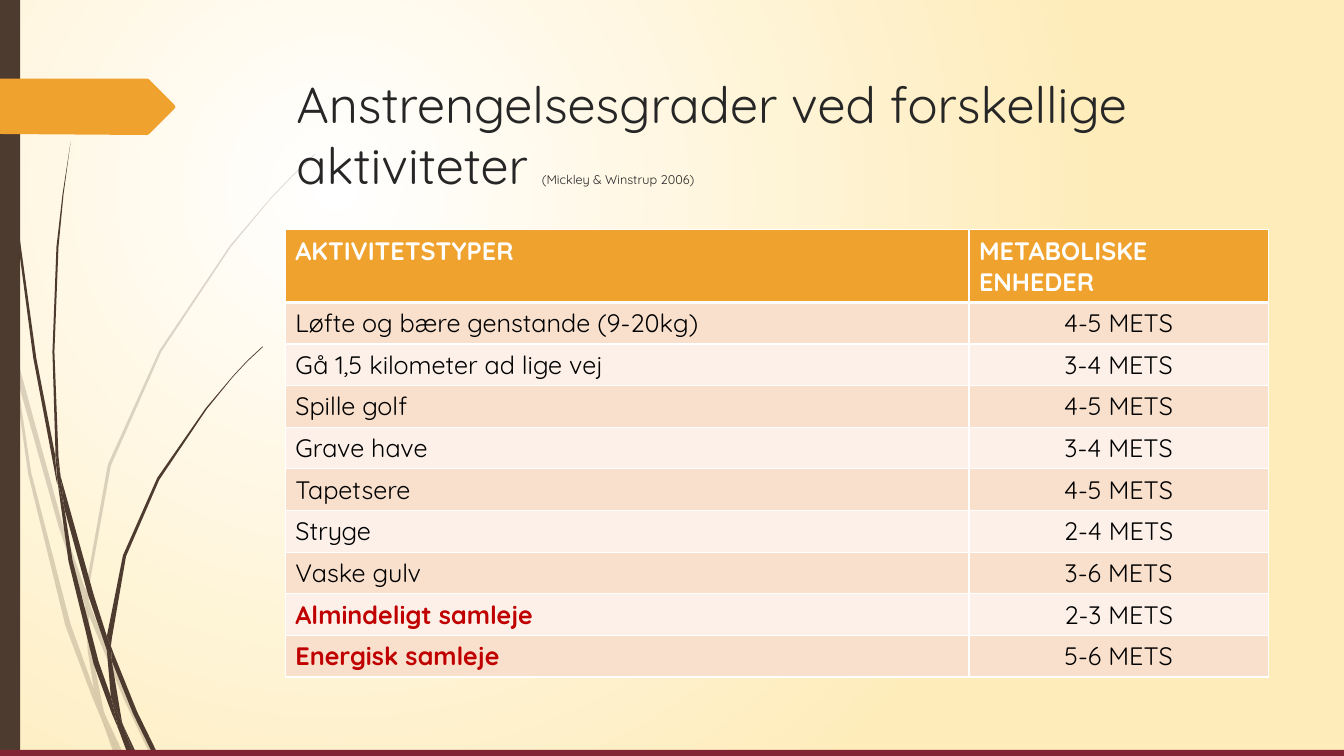
import pptx
import pptx.dml.color
import pptx.enum.shapes
import pptx.enum.text
import pptx.oxml
import pptx.oxml.ns
import pptx.util

Inches = pptx.util.Inches
RGBColor = pptx.dml.color.RGBColor
Align = pptx.enum.text.PP_ALIGN

TITLE = "Anstrengelsesgrader ved forskellige aktiviteter "
CITATION = "(Mickley & Winstrup 2006)"
HEADER = ("AKTIVITETSTYPER", "METABOLISKE ENHEDER")
ACTIVITIES = [
    ("Løfte og bære genstande (9-20kg)", "4-5 METS"),
    ("Gå 1,5 kilometer ad lige vej", "3-4 METS"),
    ("Spille golf", "4-5 METS"),
    ("Grave have", "3-4 METS"),
    ("Tapetsere", "4-5 METS"),
    ("Stryge", "2-4 METS"),
    ("Vaske gulv", "3-6 METS"),
    ("Almindeligt samleje", "2-3 METS"),
    ("Energisk samleje", "5-6 METS"),
]
HIGHLIGHTED = ("Almindeligt samleje", "Energisk samleje")
COLUMN_WIDTHS = (6.78, 2.97)
HEADER_HEIGHT = 0.72
BODY_HEIGHT = 3.72

FONT = "Quicksand"
WHITE = RGBColor(0xFF, 0xFF, 0xFF)
BLACK = RGBColor(0x00, 0x00, 0x00)
CREAM = RGBColor(0xFE, 0xEC, 0xBA)
BROWN = RGBColor(0x4E, 0x3B, 0x30)
WINE = RGBColor(0x82, 0x24, 0x33)
ORANGE = RGBColor(0xF0, 0xA2, 0x2E)
CHARCOAL = RGBColor(0x26, 0x26, 0x26)
RED = RGBColor(0xC0, 0x00, 0x00)
BANDS = (RGBColor(0xF9, 0xE0, 0xCD), RGBColor(0xFC, 0xF0, 0xE8))

FAINT_GRASS = [
    [(0.11, 3.5), (0.09, 3.22), (0, 2.82), (0, 2.99), (0.1, 3.44)],
    [(0.58, 5.22), (0.84, 5.99), (0.85, 5.86), (0.62, 5.2), (0.14, 3.45), (0.17, 3.76)],
    [(0.92, 6.07), (0.88, 5.96), (0.88, 6.1), (1.23, 6.94), (1.5, 7.51), (1.55, 7.51),
     (1.27, 6.92)],
    [(1.19, 7.51), (1.24, 7.51), (1.05, 7.11)],
    [(0.93, 6.83), (0.7, 6.19), (0.31, 4.69), (0.17, 3.76), (0.11, 3.5), (0.28, 4.7),
     (0.65, 6.21), (0.92, 6.93), (1.01, 7.14), (0.99, 7.07)],
    [(0.84, 5.99), (0.87, 6.46), (0.93, 6.83), (0.96, 6.92), (1.05, 7.11), (1.03, 7.06),
     (0.91, 6.46), (0.88, 6.1), (0.88, 6.08)],
    [(0.88, 5.84), (1.1, 4.62), (1.6, 3.49), (2.29, 2.45), (2.68, 1.98), (2.9, 1.75),
     (3.12, 1.54), (3.12, 1.53), (2.89, 1.75), (2.68, 1.97), (2.28, 2.44), (1.58, 3.48),
     (1.07, 4.61), (0.85, 5.84), (0.85, 5.86), (0.88, 5.96)],
    [(1.01, 7.14), (1.14, 7.51), (1.19, 7.51)],
    [(0.88, 6.08), (0.88, 6.1), (0.88, 5.96), (0.85, 5.86), (0.84, 5.99)],
    [(0.96, 6.92), (0.93, 6.83), (0.99, 7.07), (1.01, 7.14), (1.19, 7.51), (1.05, 7.11)],
]
DARK_GRASS = [
    [(0.07, 1.1), (0.17, 2.33), (0.33, 3.55), (0.56, 4.77), (0.57, 4.81), (0.55, 4.57),
     (0.55, 4.53), (0.36, 3.55), (0.19, 2.32), (0.08, 1.09), (0.05, 0.48), (0.04, 0),
     (0.03, 0), (0.04, 0.48)],
    [(0.88, 5.92), (1.06, 6.45), (1.06, 6.31), (0.93, 5.9), (0.6, 4.72), (0.64, 5.05)],
    [(1.13, 6.49), (1.1, 6.41), (1.11, 6.56), (1.32, 7.08), (1.52, 7.49), (1.57, 7.49),
     (1.36, 7.06)],
    [(1.1, 6.91), (0.98, 6.57), (0.72, 5.56), (0.64, 5.05), (0.57, 4.77), (0.68, 5.57),
     (0.93, 6.59), (1.11, 7.08), (1.17, 7.22), (1.16, 7.17)],
    [(0.6, 4.72), (0.58, 4.53), (0.54, 3.49), (0.58, 2.45), (0.63, 1.93), (0.7, 1.41),
     (0.62, 1.93), (0.56, 2.45), (0.52, 3.49), (0.55, 4.49)],
    [(1.33, 7.49), (1.36, 7.49), (1.22, 7.19)],
    [(0.57, 4.77), (0.64, 5.05), (0.6, 4.72), (0.55, 4.49), (0.55, 4.53)],
    [(1.11, 6.33), (1.25, 5.52), (1.58, 4.76), (2.05, 4.06), (2.31, 3.74), (2.45, 3.59),
     (2.61, 3.44), (2.6, 3.44), (2.45, 3.58), (2.31, 3.73), (2.04, 4.05), (1.56, 4.74),
     (1.22, 5.51), (1.06, 6.31), (1.1, 6.41)],
    [(1.17, 7.22), (1.27, 7.49), (1.31, 7.49)],
    [(1.06, 6.45), (1.1, 6.91), (1.16, 7.06), (1.22, 7.19), (1.21, 7.16), (1.11, 6.56),
     (1.09, 6.51)],
    [(1.06, 6.45), (1.09, 6.51), (1.11, 6.56), (1.1, 6.41), (1.06, 6.31)],
    [(1.16, 7.06), (1.1, 6.91), (1.16, 7.17), (1.17, 7.22), (1.3, 7.49), (1.33, 7.49),
     (1.22, 7.19)],
]
ARROW = [(0, 0.78), (1.46, 0.78), (1.48, 0.79), (1.73, 1.04), (1.74, 1.06), (1.73, 1.08),
         (1.48, 1.33), (1.46, 1.34), (0, 1.33)]


def paint(shape, color, alpha=None):
    shape.shadow.inherit = False
    shape.fill.solid()
    shape.fill.fore_color.rgb = color
    shape.line.fill.background()
    if alpha:
        tint = shape.element.find(".//" + pptx.oxml.ns.qn("a:srgbClr"))
        tint.append(pptx.oxml.parse_xml(
            f'<a:alpha {pptx.oxml.ns.nsdecls("a")} val="{alpha * 1000}"/>'))


def add_outline(page, points, color, alpha=None):
    start, *others = [(Inches(x), Inches(y)) for x, y in points]
    builder = page.shapes.build_freeform(*start, scale=1.0)
    builder.add_line_segments(others, close=True)
    paint(builder.convert_to_shape(), color, alpha)


def add_bar(page, left, top, width, height, color):
    bar = page.shapes.add_shape(pptx.enum.shapes.MSO_SHAPE.RECTANGLE, Inches(left),
                                Inches(top), Inches(width), Inches(height))
    paint(bar, color)


def write(para, text, size=18, color=BLACK, bold=False, align=Align.LEFT):
    para.alignment = align
    span = para.add_run()
    span.text = text
    span.font.name = FONT
    span.font.size = pptx.util.Pt(size)
    span.font.color.rgb = color
    span.font.bold = bold


def set_borders(cell, top, bottom):
    properties = cell._tc.get_or_add_tcPr()
    edges = (("lnL", 1), ("lnR", 1), ("lnT", top), ("lnB", bottom))
    for position, (edge, points) in enumerate(edges):
        properties.insert(position, pptx.oxml.parse_xml(
            f'<a:{edge} {pptx.oxml.ns.nsdecls("a")} w="{points * 12700}">'
            f'<a:solidFill><a:srgbClr val="{WHITE}"/></a:solidFill></a:{edge}>'))


def set_background(page):
    fill = page.background.fill
    fill.gradient()
    for stop, color in zip(fill.gradient_stops, (WHITE, CREAM)):
        stop.color.rgb = color
    linear = page.element.find(".//" + pptx.oxml.ns.qn("a:lin"))
    linear.getparent().replace(linear, pptx.oxml.parse_xml(
        f'<a:path {pptx.oxml.ns.nsdecls("a")} path="circle">'
        '<a:fillToRect l="50000" t="50000" r="100000" b="100000"/></a:path>'))


def add_title(page):
    box = page.shapes.add_textbox(Inches(2.84), Inches(0.68), Inches(9.75), Inches(1.4))
    box.text_frame.word_wrap = True
    para = box.text_frame.paragraphs[0]
    write(para, TITLE, size=36, color=CHARCOAL)
    write(para, CITATION, size=9, color=CHARCOAL)


def add_activity_table(page):
    rows = [HEADER, *ACTIVITIES]
    table = page.shapes.add_table(
        len(rows), len(HEADER), Inches(2.83), Inches(2.28),
        Inches(sum(COLUMN_WIDTHS)), Inches(HEADER_HEIGHT + BODY_HEIGHT)).table
    for column, width in zip(table.columns, COLUMN_WIDTHS):
        column.width = Inches(width)
    for row, texts in enumerate(rows):
        heading = row == 0
        table.rows[row].height = Inches(HEADER_HEIGHT if heading else BODY_HEIGHT / len(ACTIVITIES))
        for column, text in enumerate(texts):
            cell = table.cell(row, column)
            marked = text in HIGHLIGHTED
            cell.fill.solid()
            cell.fill.fore_color.rgb = ORANGE if heading else BANDS[(row - 1) % 2]
            set_borders(cell, top=3 if row == 1 else 1, bottom=3 if heading else 1)
            write(cell.text_frame.paragraphs[0], text,
                  color=WHITE if heading else RED if marked else BLACK,
                  bold=heading or marked,
                  align=Align.CENTER if column and not heading else Align.LEFT)


def main():
    deck = pptx.Presentation()
    deck.slide_width, deck.slide_height = Inches(13.33), Inches(7.5)
    page = deck.slides.add_slide(deck.slide_layouts[6])
    set_background(page)
    for blades, alpha in ((FAINT_GRASS, 20), (DARK_GRASS, None)):
        for blade in blades:
            add_outline(page, blade, BROWN, alpha)
    add_bar(page, 0, 0, 0.2, 7.5, BROWN)
    add_bar(page, 0, 7.44, 13.33, 0.06, WINE)
    add_outline(page, ARROW, ORANGE)
    add_title(page)
    add_activity_table(page)
    deck.save("out.pptx")


if __name__ == "__main__":
    main()
